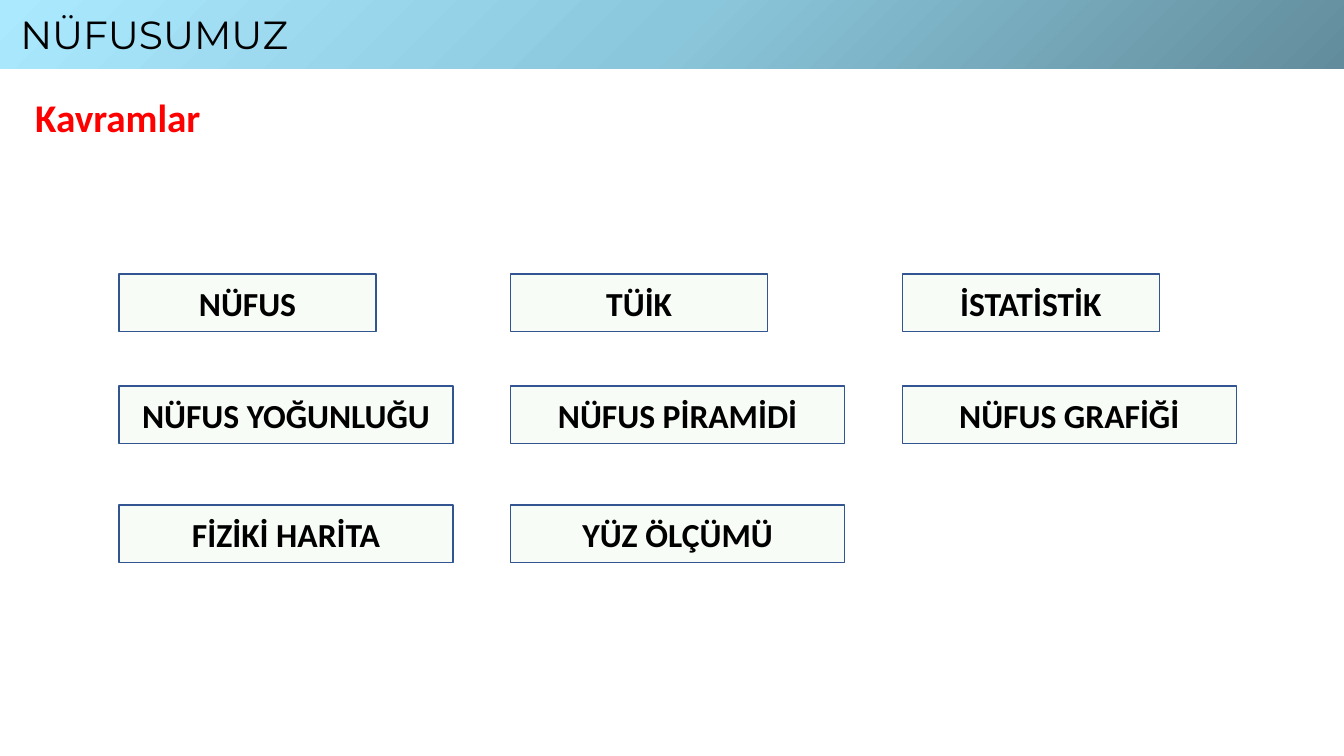
from copy import deepcopy
from dataclasses import dataclass

from pptx import Presentation
from pptx.dml.color import RGBColor
from pptx.enum.shapes import MSO_SHAPE
from pptx.enum.text import MSO_ANCHOR, MSO_AUTO_SIZE, PP_ALIGN
from pptx.oxml.ns import qn
from pptx.util import Pt


@dataclass(frozen=True)
class Theme:
    text: str = "000000"
    heading: str = "FF0000"
    box_fill: str = "F8FCF6"
    box_line: str = "325491"
    banner: tuple = ("628C9B", "8BC7DC", "ABE9FF")
    title_font: str = "Montserrat"
    body_font: str = "Calibri"
    large: int = 28
    medium: int = 24


class SlideBuilder:
    def __init__(self, slide, theme):
        self.slide = slide
        self.theme = theme

    def set_text(self, shape, text, frame_format, font_format, color, align):
        frame = shape.text_frame
        for name, value in frame_format.items():
            setattr(frame, name, value)
        paragraph = frame.paragraphs[0]
        paragraph.alignment = align
        run = paragraph.add_run()
        run.text = text
        for name, value in font_format.items():
            setattr(run.font, name, value)
        run.font.color.rgb = RGBColor.from_string(color)

    def banner_title(self, text, width, height):
        shape = self.slide.shapes.title
        position = {"left": 0, "top": 0, "width": Pt(width), "height": Pt(height)}
        for name, value in position.items():
            setattr(shape, name, value)

        # Three-stop gradient running from lower right to upper left
        shape.fill.gradient()
        shape.fill.gradient_angle = 135
        stop_list = shape._element.spPr.find(".//" + qn("a:gsLst"))
        stop_list.insert(1, deepcopy(stop_list[0]))
        for index, color in enumerate(self.theme.banner):
            stop = shape.fill.gradient_stops[index]
            stop.position = index / 2
            stop.color.rgb = RGBColor.from_string(color)

        frame_format = {"margin_left": Pt(14.5), "word_wrap": True,
                        "auto_size": MSO_AUTO_SIZE.NONE,
                        "vertical_anchor": MSO_ANCHOR.MIDDLE}
        font_format = {"name": self.theme.title_font, "size": Pt(self.theme.large)}
        self.set_text(shape, text, frame_format, font_format, self.theme.text, PP_ALIGN.LEFT)

    def heading(self, text, left, top, width, height):
        shape = self.slide.shapes.add_textbox(Pt(left), Pt(top), Pt(width), Pt(height))
        frame_format = {"word_wrap": False, "auto_size": MSO_AUTO_SIZE.SHAPE_TO_FIT_TEXT}
        font_format = {"name": self.theme.body_font, "size": Pt(self.theme.large), "bold": True}
        self.set_text(shape, text, frame_format, font_format, self.theme.heading, PP_ALIGN.LEFT)

    def concept_box(self, text, left, top, width, height):
        shape = self.slide.shapes.add_shape(
            MSO_SHAPE.RECTANGLE, Pt(left), Pt(top), Pt(width), Pt(height))
        shape.shadow.inherit = False
        shape.fill.solid()
        shape.fill.fore_color.rgb = RGBColor.from_string(self.theme.box_fill)
        shape.line.color.rgb = RGBColor.from_string(self.theme.box_line)
        shape.line.width = Pt(1)
        frame_format = {"word_wrap": True, "vertical_anchor": MSO_ANCHOR.MIDDLE}
        font_format = {"name": self.theme.body_font, "size": Pt(self.theme.medium), "bold": True}
        self.set_text(shape, text, frame_format, font_format, self.theme.text, PP_ALIGN.CENTER)


def main():
    presentation = Presentation()
    presentation.slide_width = Pt(960)
    presentation.slide_height = Pt(540)
    slide = presentation.slides.add_slide(presentation.slide_layouts[5])
    builder = SlideBuilder(slide, Theme())

    # Banner and heading
    builder.banner_title("NÜFUSUMUZ", 960, 49)
    builder.heading("Kavramlar", 18, 63.4, 134, 41)

    # Concept rows: top, box width, labels
    concept_rows = [
        (195.8, 183.6, ["NÜFUS", "TÜİK", "İSTATİSTİK"]),
        (275.8, 238.6, ["NÜFUS YOĞUNLUĞU", "NÜFUS PİRAMİDİ", "NÜFUS GRAFİĞİ"]),
        (360.7, 238.6, ["FİZİKİ HARİTA", "YÜZ ÖLÇÜMÜ"]),
    ]
    first_left, column_step, box_height = 85, 279.75, 41
    for top, width, labels in concept_rows:
        for column, label in enumerate(labels):
            builder.concept_box(label, first_left + column * column_step,
                                top, width, box_height)

    presentation.save("out.pptx")


if __name__ == "__main__":
    main()
